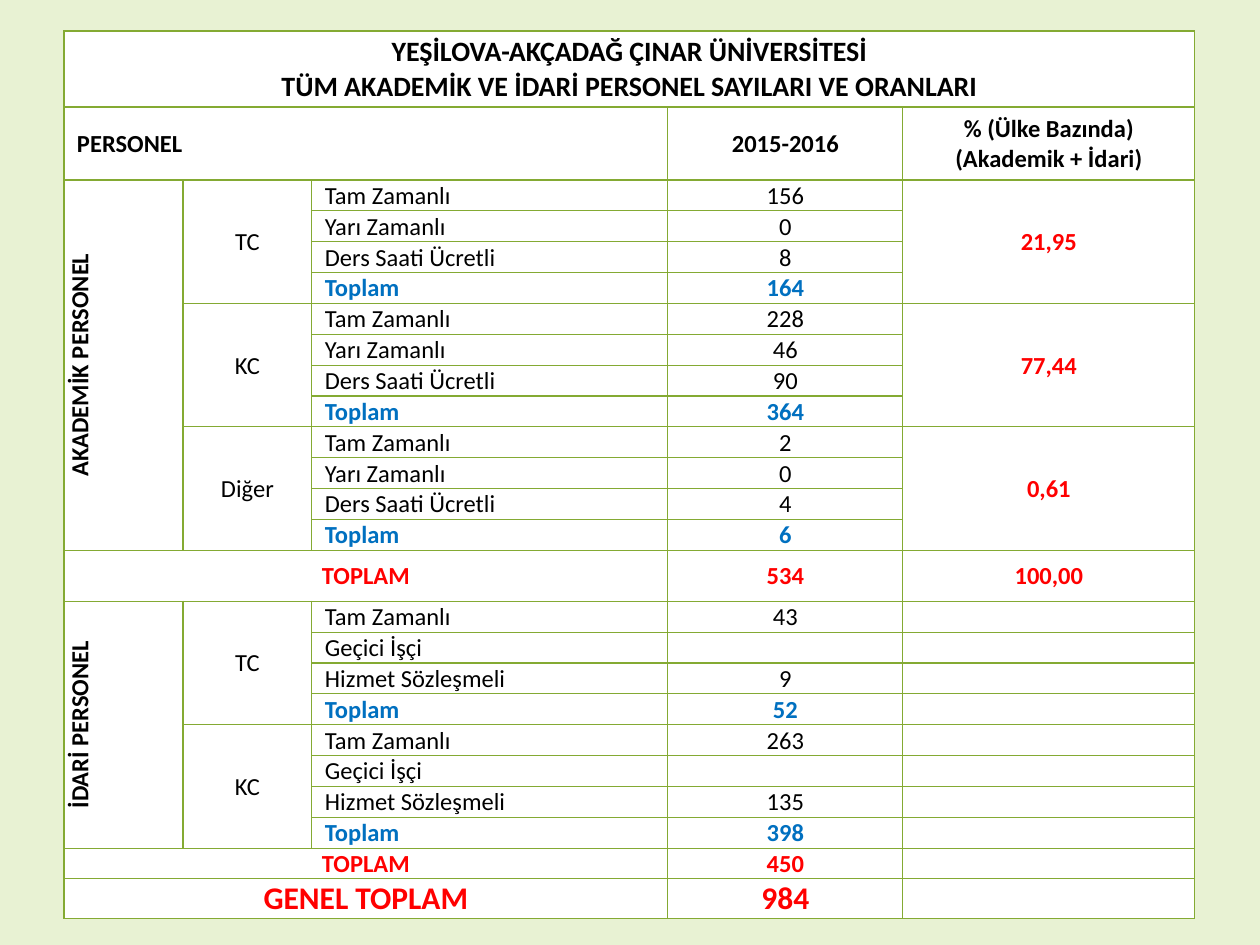
from dataclasses import dataclass

from lxml import etree
from pptx import Presentation
from pptx.dml.color import RGBColor
from pptx.enum.text import MSO_ANCHOR, PP_ALIGN
from pptx.oxml.ns import qn
from pptx.table import Table, _Cell
from pptx.util import Emu, Pt

LEFT, CENTER = PP_ALIGN.LEFT, PP_ALIGN.CENTER
MIDDLE = MSO_ANCHOR.MIDDLE
EMU_PER_PX = 914400 / 126


def px(length: int) -> Emu:
    return Emu(round(length * EMU_PER_PX))


@dataclass(frozen=True)
class Theme:
    font: str = "Calibri"
    background: str = "E8F2D3"
    cell: str = "FFFFFF"
    border: str = "84AA33"
    text: str = "000000"
    subtotal: str = "0070C0"
    total: str = "FF0000"
    body_size: int = 14
    heading_size: int = 16
    grand_size: int = 18
    border_width: float = 0.75


THEME = Theme()


@dataclass(frozen=True)
class Style:
    color: str = THEME.text
    bold: bool = False
    size: int = THEME.body_size
    align: PP_ALIGN = CENTER


PLAIN = Style()
LABEL = Style(align=LEFT)
HEADER = Style(bold=True)
HEADER_LEFT = Style(bold=True, align=LEFT)
HEADING = Style(bold=True, size=THEME.heading_size)
SUBTOTAL = Style(THEME.subtotal, bold=True)
SUBTOTAL_LABEL = Style(THEME.subtotal, bold=True, align=LEFT)
TOTAL = Style(THEME.total, bold=True)
GRAND = Style(THEME.total, bold=True, size=THEME.grand_size)


@dataclass(frozen=True)
class Group:
    country: str
    counts: tuple[str, ...]
    share: str = ""


@dataclass(frozen=True)
class Section:
    name: str
    contracts: tuple[str, ...]
    groups: tuple[Group, ...]
    total: str
    share: str = ""


SECTIONS = (
    Section(
        "AKADEMİK PERSONEL",
        ("Tam Zamanlı", "Yarı Zamanlı", "Ders Saati Ücretli", "Toplam"),
        (
            Group("TC", ("156", "0", "8", "164"), "21,95"),
            Group("KC", ("228", "46", "90", "364"), "77,44"),
            Group("Diğer", ("2", "0", "4", "6"), "0,61"),
        ),
        "534",
        "100,00",
    ),
    Section(
        "İDARİ PERSONEL",
        ("Tam Zamanlı", "Geçici İşçi", "Hizmet Sözleşmeli", "Toplam"),
        (
            Group("TC", ("43", "", "9", "52")),
            Group("KC", ("263", "", "135", "398")),
        ),
        "450",
    ),
)

COLUMNS = (119, 129, 356, 235, 292)
TABLE_LEFT, TABLE_TOP, TABLE_HEIGHT = 64, 31, 877
LINE_ROW = 28
ROWS = (76, 73, *[LINE_ROW] * 12, 51, *[LINE_ROW] * 9, 34)


def prepare(cell: _Cell) -> None:
    """Give a cell its borders, fill, margins and text size."""
    properties = cell._tc.get_or_add_tcPr()
    for side in ("a:lnL", "a:lnR", "a:lnT", "a:lnB"):
        line = etree.SubElement(properties, qn(side), w=str(Pt(THEME.border_width)))
        fill = etree.SubElement(line, qn("a:solidFill"))
        etree.SubElement(fill, qn("a:srgbClr"), val=THEME.border)
    cell.fill.solid()
    cell.fill.fore_color.rgb = RGBColor.from_string(THEME.cell)
    cell.margin_left = cell.margin_right = px(13)
    cell.margin_top, cell.margin_bottom = px(1), 0
    cell.vertical_anchor = MIDDLE
    # An empty cell keeps the body size so that its row stays low
    paragraph = cell.text_frame.paragraphs[0]._p
    etree.SubElement(paragraph, qn("a:endParaRPr"), sz=str(THEME.body_size * 100))


def write(table: Table, row: int, column: int, text: str, style: Style,
          rows: int = 1, columns: int = 1) -> _Cell:
    """Write text into a cell, merged over the given rows and columns."""
    cell = table.cell(row, column)
    if rows > 1 or columns > 1:
        cell.merge(table.cell(row + rows - 1, column + columns - 1))
    if text:
        paragraph = cell.text_frame.paragraphs[0]
        paragraph.text = text
        paragraph.alignment = style.align
        font = paragraph.font
        font.name, font.size, font.bold = THEME.font, Pt(style.size), style.bold
        font.color.rgb = RGBColor.from_string(style.color)
    return cell


def write_total(table: Table, row: int, label: str, count: str, share: str,
                style: Style) -> None:
    write(table, row, 0, label, style, columns=3)
    write(table, row, 3, count, style)
    write(table, row, 4, share, style)


def write_section(table: Table, top: int, section: Section) -> int:
    """Write one staff section and return the row below it."""
    size = len(section.contracts)
    height = size * len(section.groups)
    name = write(table, top, 0, section.name, HEADER, rows=height)
    name._tc.get_or_add_tcPr().set("vert", "vert270")
    for index, group in enumerate(section.groups):
        start = top + index * size
        write(table, start, 1, group.country, PLAIN, rows=size)
        if group.share:
            write(table, start, 4, group.share, TOTAL, rows=size)
        for offset, (contract, count) in enumerate(zip(section.contracts, group.counts)):
            is_subtotal = offset == size - 1
            write(table, start + offset, 2, contract, SUBTOTAL_LABEL if is_subtotal else LABEL)
            write(table, start + offset, 3, count, SUBTOTAL if is_subtotal else PLAIN)
    write_total(table, top + height, "TOPLAM", section.total, section.share, TOTAL)
    return top + height + 1


def main() -> None:
    deck = Presentation()
    deck.slide_width, deck.slide_height = px(1260), px(945)
    slide = deck.slides.add_slide(deck.slide_layouts[6])
    slide.background.fill.solid()
    slide.background.fill.fore_color.rgb = RGBColor.from_string(THEME.background)

    # Table grid
    frame = slide.shapes.add_table(len(ROWS), len(COLUMNS), px(TABLE_LEFT), px(TABLE_TOP),
                                   px(sum(COLUMNS)), px(TABLE_HEIGHT))
    staff = frame.table
    staff.first_row = staff.horz_banding = False
    for column, width in zip(staff.columns, COLUMNS):
        column.width = px(width)
    for row, height in zip(staff.rows, ROWS):
        row.height = px(height)
    frame.height = px(TABLE_HEIGHT)
    for cell in staff.iter_cells():
        prepare(cell)

    # Heading and column headers
    write(staff, 0, 0, "YEŞİLOVA-AKÇADAĞ ÇINAR ÜNİVERSİTESİ\n"
          "TÜM AKADEMİK VE İDARİ PERSONEL SAYILARI VE ORANLARI", HEADING, columns=5)
    write(staff, 1, 0, "PERSONEL", HEADER_LEFT, columns=3)
    write(staff, 1, 3, "2015-2016", HEADER)
    write(staff, 1, 4, "% (Ülke Bazında)\n(Akademik + İdari)", HEADER)

    # Staff sections and grand total
    next_row = 2
    for section in SECTIONS:
        next_row = write_section(staff, next_row, section)
    write_total(staff, next_row, "GENEL TOPLAM", "984", "", GRAND)

    deck.save("out.pptx")


if __name__ == "__main__":
    main()
